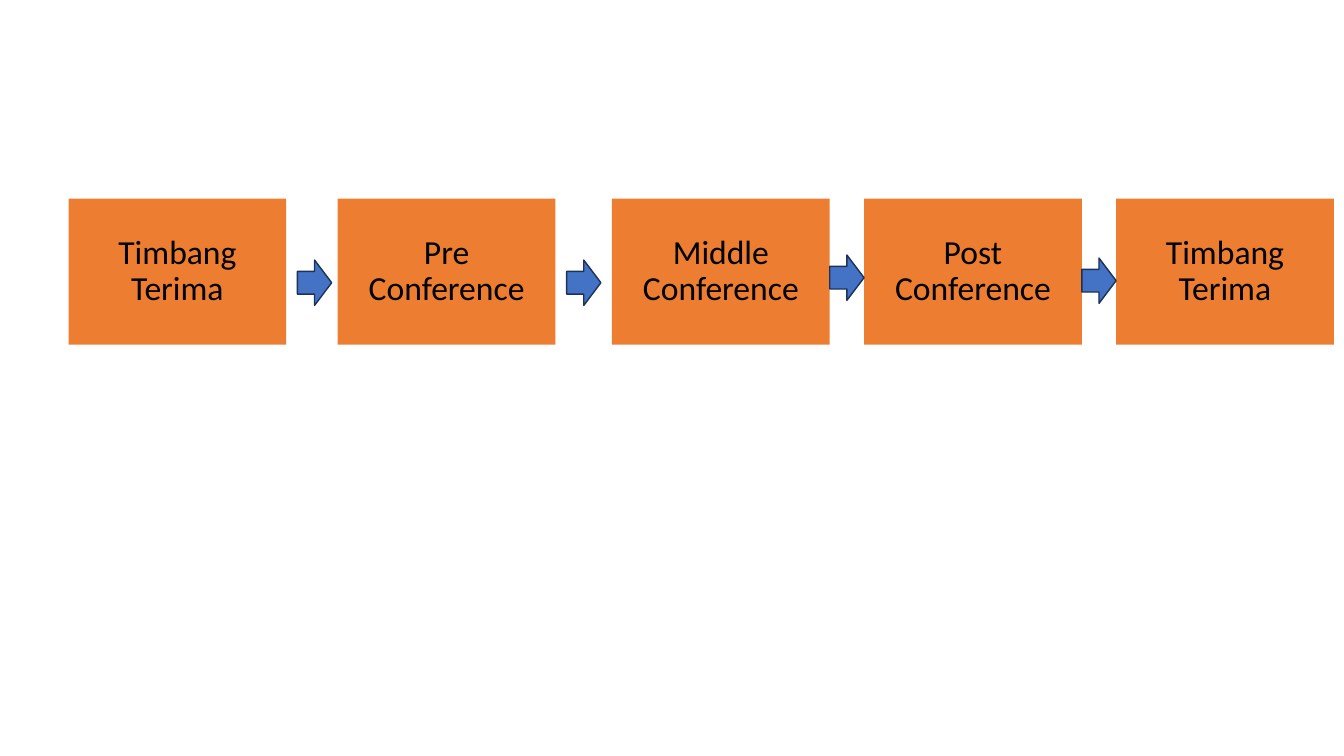
from dataclasses import dataclass

import pptx
import pptx.dml.color
import pptx.enum.shapes
import pptx.enum.text
import pptx.shapes.autoshape
import pptx.slide
import pptx.util
from pptx.util import Inches

COLORS = {"box": "ED7D31", "arrow": "4472C4", "outline": "1E3256", "text": "000000"}
BOX_TOP, BOX_W, BOX_H = 1.97, 2.16, 1.45
ARROW_W, ARROW_H = 0.34, 0.45


@dataclass
class Stage:
    left: float
    label: str


@dataclass
class Arrow:
    left: float
    top: float


STAGES = [
    Stage(0.68, "Timbang Terima"),
    Stage(3.35, "Pre Conference"),
    Stage(6.07, "Middle Conference"),
    Stage(8.57, "Post Conference"),
    Stage(11.07, "Timbang Terima"),
]
ARROWS = [Arrow(2.95, 2.58), Arrow(5.62, 2.58), Arrow(8.23, 2.53), Arrow(10.73, 2.56)]


def rgb(name: str) -> pptx.dml.color.RGBColor:
    return pptx.dml.color.RGBColor.from_string(COLORS[name])


def add_filled(
    s: pptx.slide.Slide,
    kind: pptx.enum.shapes.MSO_SHAPE,
    left: float,
    top: float,
    width: float,
    height: float,
    fill: str,
) -> pptx.shapes.autoshape.Shape:
    sp = s.shapes.add_shape(kind, Inches(left), Inches(top), Inches(width), Inches(height))
    sp.shadow.inherit = False
    sp.fill.solid()
    sp.fill.fore_color.rgb = rgb(fill)
    return sp


def add_stage(s: pptx.slide.Slide, stage: Stage) -> None:
    sp = add_filled(s, pptx.enum.shapes.MSO_SHAPE.RECTANGLE,
                    stage.left, BOX_TOP, BOX_W, BOX_H, "box")
    sp.line.fill.background()
    tf = sp.text_frame
    tf.text = stage.label
    tf.word_wrap = True
    tf.vertical_anchor = pptx.enum.text.MSO_ANCHOR.MIDDLE
    p = tf.paragraphs[0]
    p.alignment = pptx.enum.text.PP_ALIGN.CENTER
    p.line_spacing = 0.9
    r = p.runs[0]
    r.font.name = "Calibri"
    r.font.size = pptx.util.Pt(24)
    r.font.color.rgb = rgb("text")


def add_arrow(s: pptx.slide.Slide, arrow: Arrow) -> None:
    sp = add_filled(s, pptx.enum.shapes.MSO_SHAPE.RIGHT_ARROW,
                    arrow.left, arrow.top, ARROW_W, ARROW_H, "arrow")
    sp.line.color.rgb = rgb("outline")
    sp.line.width = pptx.util.Pt(1)


def main() -> None:
    prs = pptx.Presentation()
    prs.slide_width, prs.slide_height = Inches(13.33), Inches(7.5)
    s = prs.slides.add_slide(prs.slide_layouts[6])

    # Stages of the shift
    for stage in STAGES:
        add_stage(s, stage)

    # Arrows between the stages
    for arrow in ARROWS:
        add_arrow(s, arrow)

    prs.save("out.pptx")


if __name__ == "__main__":
    main()
